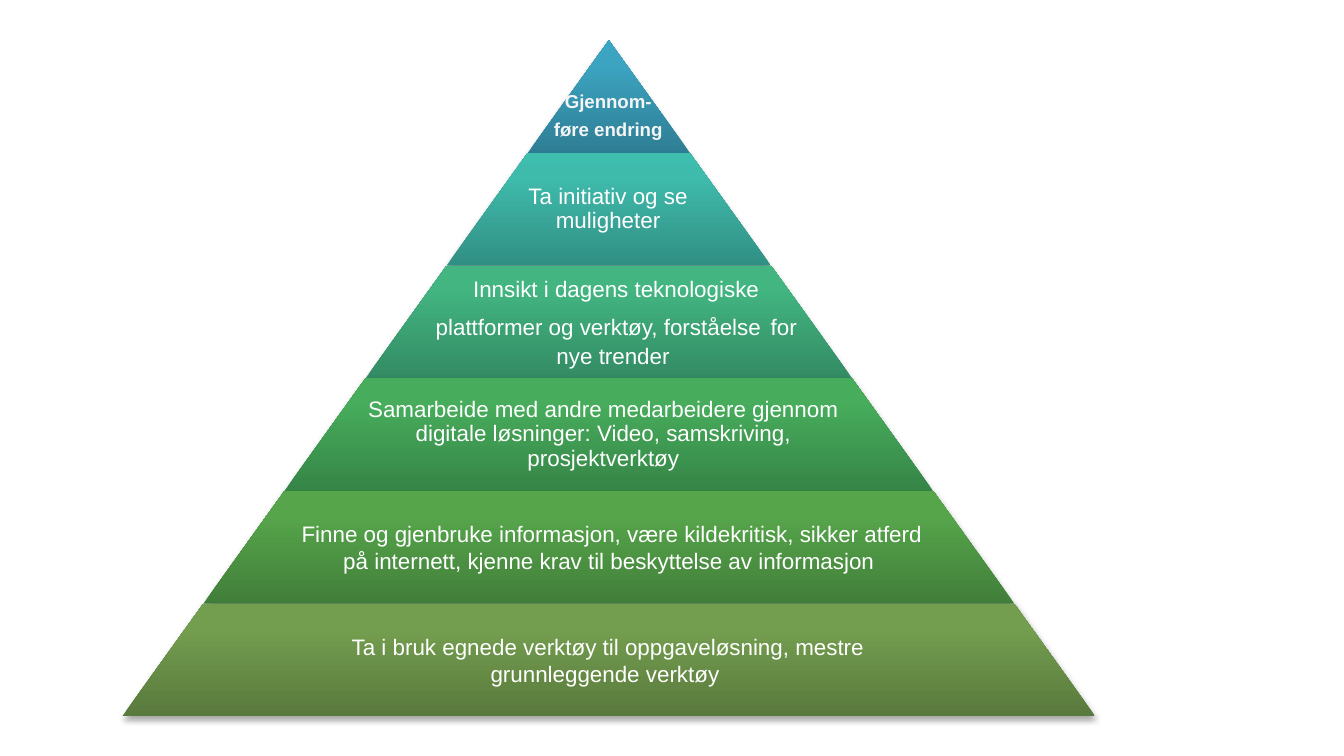
from copy import deepcopy
from lxml.etree import SubElement as Sub
from pptx import Presentation
from pptx.dml.color import RGBColor as RGB
from pptx.enum.shapes import MSO_SHAPE as Shape
from pptx.enum.text import MSO_ANCHOR as Anchor, PP_ALIGN as Align
from pptx.oxml.ns import qn
from pptx.util import Inches as In, Pt

WIDE = In(10)
HIGH = WIDE * 9 // 16

# From top to base: gradient, text left and width in % of the slide width,
# paragraphs (each a list of text and size), then format values
TIERS = [
    (("2E7E94", "3CA4C1", "3AA6C4"), 39.2, 12.1,
     [[("Gjennom-", 10)], [("føre endring", 10)]],
     dict(line=0.9, top=0.32, bold=True, color="F5F5F5")),
    (("319084", "3FBBAC", "3DBEAE"), 37.4, 15.7,
     [[("Ta initiativ og se muligheter", 12)]], dict(line=0.9)),
    (("338B64", "42B581", "40B882"), 26.4, 33.9,
     [[("Innsikt i dagens teknologiske plattformer og verktøy, forståelse", 12),
       (" ", 18), ("for nye trender ", 12)]], dict(left=0.52)),
    (("368547", "47AD5C", "45AF5B"), 26.4, 37,
     [[("Samarbeide med andre medarbeidere gjennom digitale løsninger: "
        "Video, samskriving, prosjektverktøy", 12)]], dict(line=0.9)),
    (("427F3A", "56A54B", "55A849"), 21.7, 47.7,
     [[("Finne og gjenbruke informasjon, være kildekritisk, sikker atferd på "
        "internett, kjenne krav til beskyttelse av informasjon ", 12)]], {}),
    (("597A3D", "749E4F", "74A14E"), 21.7, 47.1,
     [[("Ta i bruk egnede verktøy til oppgaveløsning, mestre "
        "grunnleggende verktøy ", 12)]], {}),
]


def rgb(code):
    return RGB.from_string(code)


def shade(shape, colors):
    """Fill from bottom to top with three colour stops."""
    fill = shape.fill
    fill.gradient()
    fill.gradient_angle = 90
    last = fill._fill._gradFill.find(qn("a:gsLst"))[-1]
    last.addnext(deepcopy(last))
    for stop, color, pos in zip(fill.gradient_stops, colors, (0, 0.8, 1)):
        stop.color.rgb = rgb(color)
        stop.position = pos


def shadow(shape):
    shape.shadow.inherit = False
    effects = shape._element.spPr.find(qn("a:effectLst"))
    outer = Sub(effects, qn("a:outerShdw"), blurRad=str(Pt(3.1)),
                dist=str(Pt(1.8)), dir="5400000", rotWithShape="0")
    color = Sub(outer, qn("a:srgbClr"), val="000000")
    Sub(color, qn("a:alpha"), val="35000")


def band(slide, box, slant, colors):
    shape = slide.shapes.add_shape(Shape.TRAPEZOID, *box)
    shape.adjustments[0] = slant / min(box[2:])
    shape.line.fill.background()
    shade(shape, colors)
    shadow(shape)


def label(slide, box, paras, line=1.0, top=0.02, left=0.02,
          bold=False, color="FFFFFF"):
    frame = slide.shapes.add_textbox(*box).text_frame
    values = dict(word_wrap=True, vertical_anchor=Anchor.MIDDLE,
                  margin_left=In(left), margin_top=In(top),
                  margin_right=In(0.02), margin_bottom=In(0.02))
    for name, value in values.items():
        setattr(frame, name, value)
    for i, runs in enumerate(paras):
        para = frame.add_paragraph() if i else frame.paragraphs[0]
        para.alignment = Align.CENTER
        para.line_spacing = line
        para.space_after = Pt(4 if i < len(paras) - 1 else 0)
        for text, size in runs:
            run = para.add_run()
            run.text = text
            for name, value in dict(name="Arial", size=Pt(size), bold=bold).items():
                setattr(run.font, name, value)
            run.font.color.rgb = rgb(color)


def pyramid(slide, left, top, width, height):
    """Stack the tiers; each is one step wider than the one above."""
    count = len(TIERS)
    step, row = width / count, height / count
    for i, (colors, start, span, paras, style) in enumerate(TIERS):
        wide, y = step * (i + 1), int(top + row * i)
        x = int(left + (width - wide) / 2)
        band(slide, (x, y, int(wide), int(row)), step / 2, colors)
        box = int(WIDE * start / 100), y, int(WIDE * span / 100), int(row)
        label(slide, box, paras, **style)


def main():
    deck = Presentation()
    deck.slide_width, deck.slide_height = WIDE, HIGH
    slide = deck.slides.add_slide(deck.slide_layouts[6])
    pyramid(slide, In(0.91), In(0.3), In(7.24), In(5.03))
    deck.save("out.pptx")


if __name__ == "__main__":
    main()
